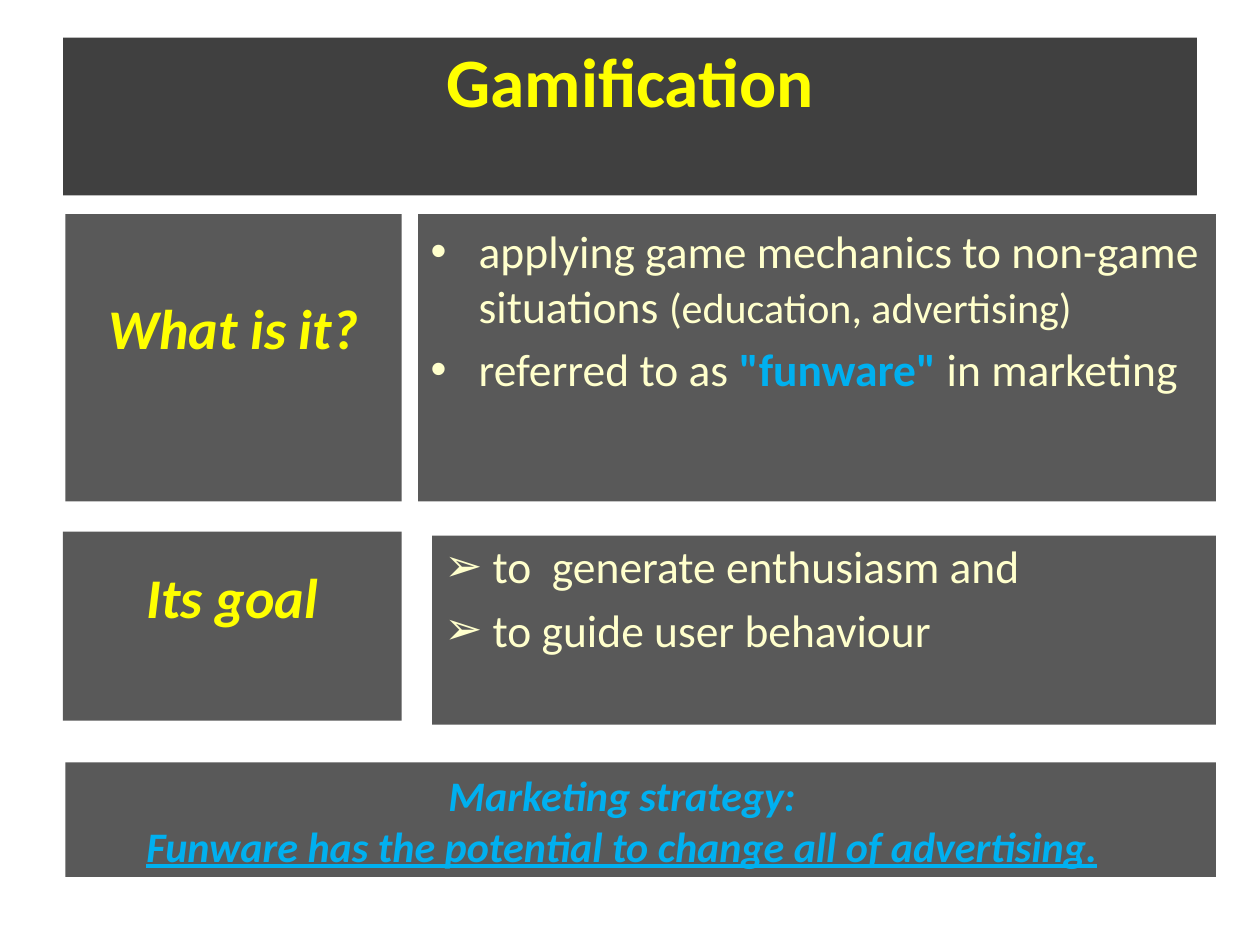
from dataclasses import dataclass

from lxml.etree import SubElement
from pptx import Presentation
from pptx.dml.color import RGBColor as RGB
from pptx.enum.shapes import MSO_SHAPE as Shape
from pptx.enum.text import MSO_ANCHOR as Anchor, MSO_AUTO_SIZE as AutoSize, PP_ALIGN as Align
from pptx.oxml.ns import qn
from pptx.util import Cm, Pt


@dataclass(frozen=True)
class Theme:
    font: str = "Calibri"
    bar: str = "404040"
    panel: str = "595959"
    heading: str = "FFFF00"
    body: str = "FFFFCC"
    accent: str = "00B0F0"
    title_size: float = 39.6
    label_size: float = 32
    body_size: float = 26
    small_size: float = 24
    para_gap: float = 5.2
    indent: float = 0.97


THEME = Theme()


@dataclass(frozen=True)
class Run:
    text: str
    size: float = THEME.body_size
    color: str = THEME.body
    bold: bool = False
    italic: bool = False
    underline: bool = False


@dataclass(frozen=True)
class Panel:
    """A filled box; lengths are in centimetres."""
    left: float
    top: float
    width: float
    height: float
    paras: list[list[Run]]
    inset_top: float
    inset_right: float = 0.25
    fill: str = THEME.panel
    bullet: str = ""
    gap: float = 0


def label(text: str) -> list[list[Run]]:
    return [[Run(text, THEME.label_size, THEME.heading, bold=True, italic=True)]]


def strategy(text: str, underline: bool = False) -> list[Run]:
    return [Run(text, THEME.small_size, THEME.accent, True, True, underline)]


TITLE = Panel(1.27, 0.76, 22.86, 3.18,
              [[Run("Gamification", THEME.title_size, THEME.heading, bold=True)]],
              inset_top=0, fill=THEME.bar)

PANELS = [
    Panel(8.43, 4.32, 16.08, 5.79, [
        [Run("applying game mechanics to non-game situations "),
         Run("(education, advertising)", THEME.small_size)],
        [Run("referred to as "),
         Run('"funware" ', color=THEME.accent, bold=True),
         Run("in marketing")],
    ], inset_top=0.18, bullet="•", gap=THEME.para_gap),
    Panel(1.32, 4.32, 6.78, 5.79, label("What is it?"), inset_top=1.6),
    Panel(1.27, 10.72, 6.83, 3.81, label("Its goal"), inset_top=0.63),
    Panel(1.32, 15.37, 23.19, 2.31, [
        strategy("Marketing strategy:"),
        strategy("Funware has the potential to change all of advertising.", underline=True),
    ], inset_top=0.15, inset_right=1),
    Panel(8.71, 10.8, 15.8, 3.81, [
        [Run("to  generate enthusiasm and")],
        [Run("to guide user behaviour")],
    ], inset_top=0.05, bullet="➢", gap=THEME.para_gap),
]


def set_bullet(p, char: str) -> None:
    """Give a paragraph a hanging bullet."""
    pPr = p._p.get_or_add_pPr()
    indent = Cm(THEME.indent)
    pPr.set("marL", str(indent))
    pPr.set("indent", str(-indent))
    SubElement(pPr, qn("a:buFont")).set("typeface", "Arial")
    SubElement(pPr, qn("a:buChar")).set("char", char)


def add_run(p, run: Run) -> None:
    r = p.add_run()
    r.text = run.text
    formats = {"name": THEME.font, "size": Pt(run.size), "bold": run.bold,
               "italic": run.italic, "underline": run.underline}
    for name, value in formats.items():
        setattr(r.font, name, value)
    r.font.color.rgb = RGB.from_string(run.color)


def format_panel(sp, panel: Panel) -> None:
    """Place, fill and write the text of a shape or placeholder."""
    for side in ("left", "top", "width", "height"):
        setattr(sp, side, Cm(getattr(panel, side)))
    sp.fill.solid()
    sp.fill.fore_color.rgb = RGB.from_string(panel.fill)
    sp.line.fill.background()

    tf = sp.text_frame
    frame = {"word_wrap": True, "auto_size": AutoSize.NONE, "vertical_anchor": Anchor.TOP,
             "margin_top": Cm(panel.inset_top), "margin_right": Cm(panel.inset_right)}
    for name, value in frame.items():
        setattr(tf, name, value)

    for i, runs in enumerate(panel.paras):
        p = tf.add_paragraph() if i else tf.paragraphs[0]
        p.alignment = Align.LEFT if panel.bullet else Align.CENTER
        p.space_before = Pt(panel.gap if i else 0)
        if panel.bullet:
            set_bullet(p, panel.bullet)
        for run in runs:
            add_run(p, run)


def add_panel(s, panel: Panel) -> None:
    sp = s.shapes.add_shape(Shape.RECTANGLE, 0, 0, 0, 0)
    sp.shadow.inherit = False
    format_panel(sp, panel)


def main() -> None:
    prs = Presentation()
    prs.slide_width, prs.slide_height = Cm(25.4), Cm(19.05)
    s = prs.slides.add_slide(prs.slide_layouts[5])
    format_panel(s.shapes.title, TITLE)
    for panel in PANELS:
        add_panel(s, panel)
    prs.save("out.pptx")


if __name__ == "__main__":
    main()
